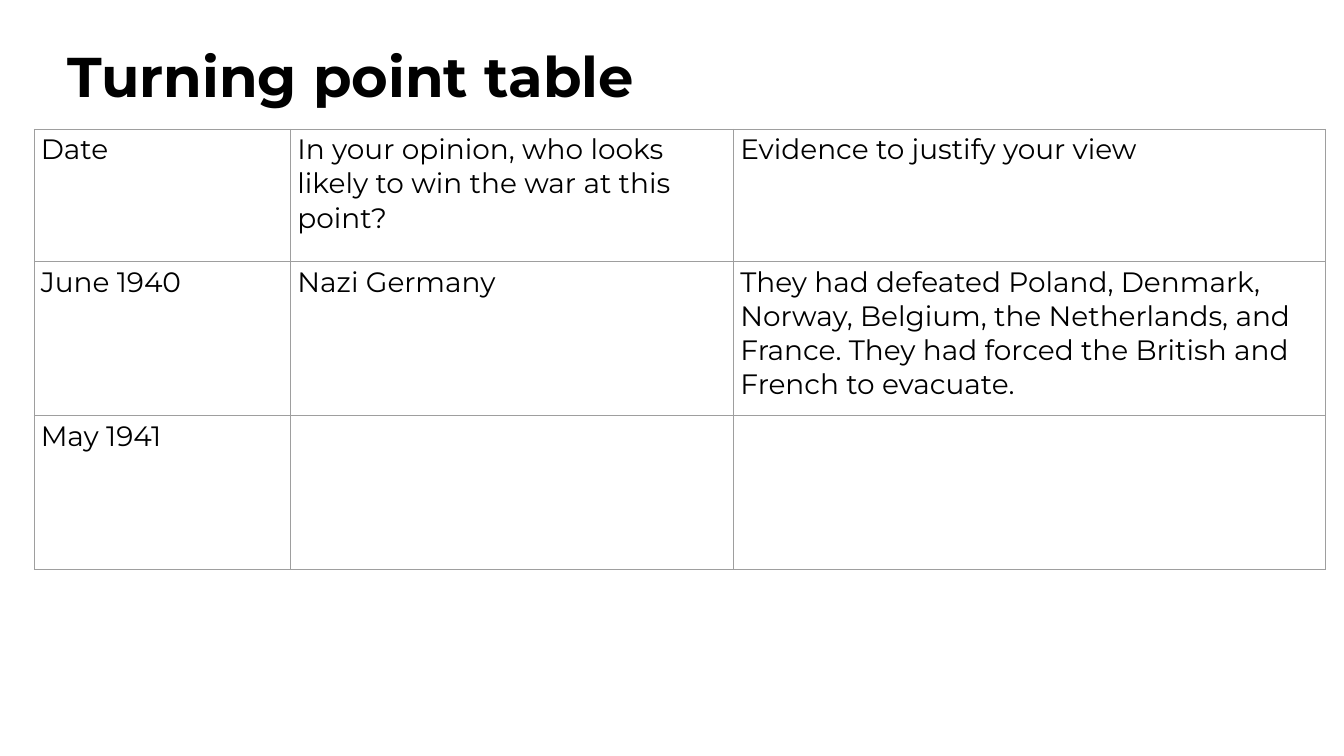
from dataclasses import dataclass
from lxml.etree import SubElement
from pptx import Presentation
from pptx.dml.color import RGBColor
from pptx.enum.text import MSO_ANCHOR, MSO_AUTO_SIZE, PP_ALIGN
from pptx.oxml.ns import qn
from pptx.util import Pt

TITLE = "Turning point table"
ROWS = [
    ("Date", "In your opinion, who looks likely to win the war at this point?",
     "Evidence to justify your view"),
    ("June 1940", "Nazi Germany",
     "They had defeated Poland, Denmark, Norway, Belgium, the Netherlands, and France. "
     "They had forced the British and French to evacuate."),
    ("May 1941", "", ""),
]
COL_WIDTHS = (275, 474.5, 634.5)
ROW_HEIGHTS = (142, 165, 165)


@dataclass(frozen=True)
class Theme:
    font: str = "Montserrat"
    text: str = "000000"
    border: str = "9E9E9E"
    title_size: float = 60
    cell_size: float = 30
    border_width: float = 0.75
    cell_margin: float = 7.2


THEME = Theme()


def write(tf, text, *, size, bold=False, margin=0, spacing=1.0):
    tf.word_wrap = True
    tf.margin_left = tf.margin_right = tf.margin_top = tf.margin_bottom = Pt(margin)
    p = tf.paragraphs[0]
    p.alignment = PP_ALIGN.LEFT
    p.line_spacing = spacing
    p.font.size = Pt(size)
    if text:
        r = p.add_run()
        r.text = text
        r.font.name = THEME.font
        r.font.size = Pt(size)
        r.font.bold = bold
        r.font.color.rgb = RGBColor.from_string(THEME.text)


def add_borders(cell):
    tc_pr = cell._tc.get_or_add_tcPr()
    for i, side in enumerate(("a:lnL", "a:lnR", "a:lnT", "a:lnB")):
        ln = tc_pr.makeelement(qn(side), {"w": str(Pt(THEME.border_width))})
        fill = SubElement(ln, qn("a:solidFill"))
        SubElement(fill, qn("a:srgbClr"), val=THEME.border)
        tc_pr.insert(i, ln)


def add_title(s):
    sp = s.shapes.title
    sp.left, sp.top, sp.width, sp.height = Pt(72), Pt(34), Pt(1295), Pt(128)
    tf = sp.text_frame
    tf.auto_size = MSO_AUTO_SIZE.NONE
    tf.vertical_anchor = MSO_ANCHOR.TOP
    write(tf, TITLE, size=THEME.title_size, bold=True, spacing=1.15)


def add_turning_points(s):
    table = s.shapes.add_table(
        len(ROWS), len(COL_WIDTHS), Pt(36.5), Pt(138.5),
        Pt(sum(COL_WIDTHS)), Pt(sum(ROW_HEIGHTS))).table
    table.first_row = table.horz_banding = False
    for col, width in zip(table.columns, COL_WIDTHS):
        col.width = Pt(width)
    for row, height, texts in zip(table.rows, ROW_HEIGHTS, ROWS):
        row.height = Pt(height)
        for cell, text in zip(row.cells, texts):
            write(cell.text_frame, text, size=THEME.cell_size, margin=THEME.cell_margin)
            cell.vertical_anchor = MSO_ANCHOR.TOP
            cell.fill.background()
            add_borders(cell)


def main():
    prs = Presentation()
    prs.slide_width, prs.slide_height = Pt(1440), Pt(810)
    s = prs.slides.add_slide(prs.slide_layouts[5])
    add_title(s)
    add_turning_points(s)
    prs.save("out.pptx")


if __name__ == "__main__":
    main()
